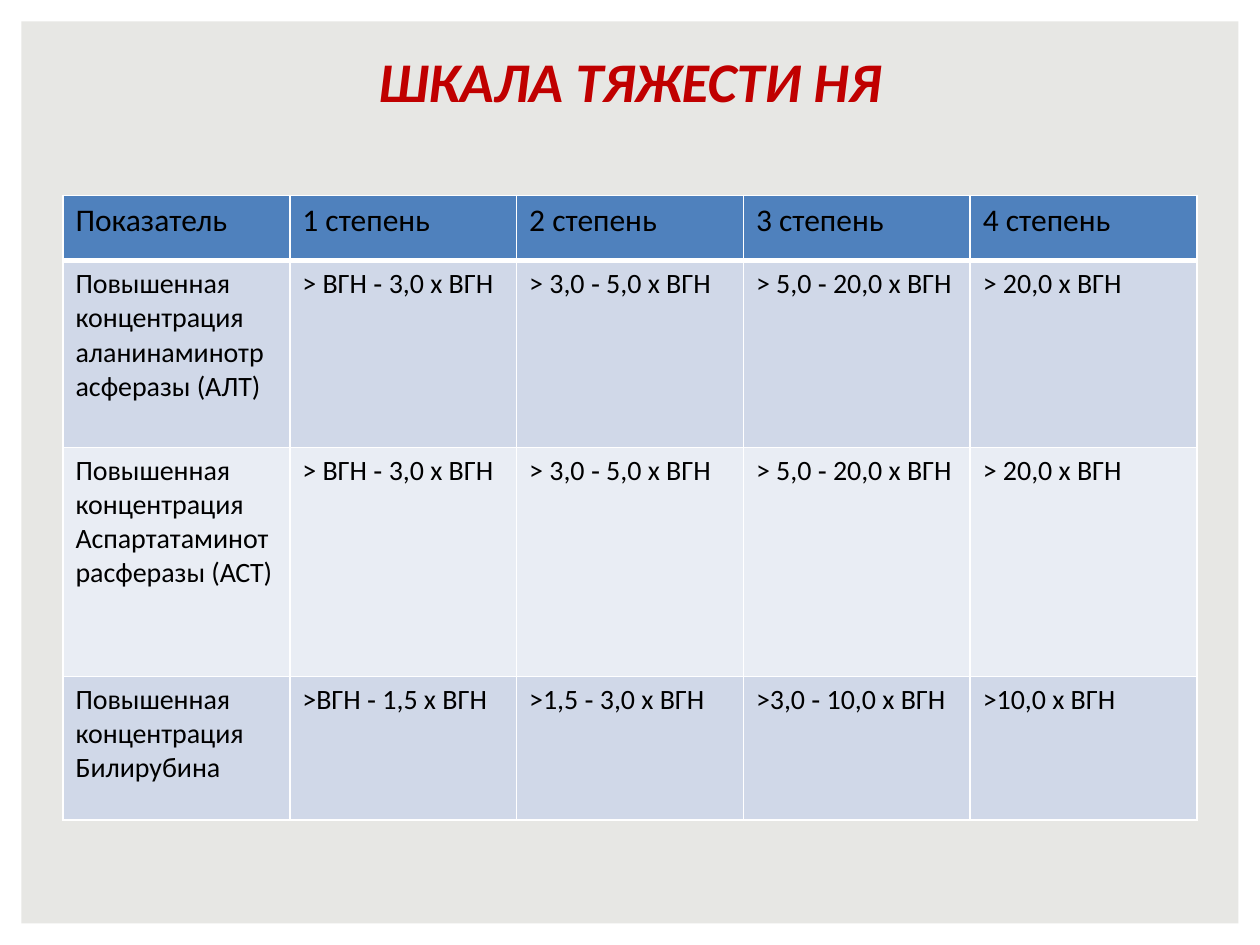
from lxml.etree import SubElement
from pptx import Presentation
from pptx.dml.color import RGBColor
from pptx.enum.shapes import MSO_SHAPE
from pptx.enum.text import MSO_ANCHOR, PP_ALIGN
from pptx.oxml.ns import qn
from pptx.util import Emu, Pt

PX = 9144  # EMU per px, 100 px to the inch
SLIDE_W, SLIDE_H = 1000, 750
MARGIN = 17

PANEL = "E7E7E4"
WHITE = "FFFFFF"
HEADER_FILL = "4F81BD"
BAND_FILLS = ["D0D8E8", "E9EDF4"]

TITLE_FONT = {"name": "Calibri", "size": Pt(32), "bold": True, "italic": True}
HEADER_FONT = {"name": "Calibri", "size": Pt(18), "bold": False}
BODY_FONT = {"name": "Calibri", "size": Pt(16), "bold": False}

ENZYME_GRADES = ["> ВГН ‐ 3,0 x ВГН", "> 3,0 ‐ 5,0 x ВГН", "> 5,0 ‐ 20,0 x ВГН", "> 20,0 x ВГН"]
BILIRUBIN_GRADES = [">ВГН ‐ 1,5 x ВГН", ">1,5 ‐ 3,0 x ВГН", ">3,0 ‐ 10,0 x ВГН", ">10,0 x ВГН"]
RAISED = "Повышенная\nконцентрация\n"
SEVERITY_ROWS = [
    ["Показатель"] + [f"{grade} степень" for grade in range(1, 5)],
    [RAISED + "аланинаминотрасферазы (АЛТ)"] + ENZYME_GRADES,
    [RAISED + "Аспартатаминотрасферазы (АСТ)"] + ENZYME_GRADES,
    [RAISED + "Билирубина"] + BILIRUBIN_GRADES,
]
ROW_HEIGHTS = [52, 148, 182, 114]


def emu(*lengths):
    return [Emu(length * PX) for length in lengths]


def rgb(value):
    return RGBColor.from_string(value)


def set_font(text_frame, font_values, color):
    for paragraph in text_frame.paragraphs:
        for run in paragraph.runs:
            for attribute, value in font_values.items():
                setattr(run.font, attribute, value)
            run.font.color.rgb = rgb(color)


def set_borders(cell, widths):
    """Draw white cell borders; widths maps side letters to points."""
    properties = cell._tc.get_or_add_tcPr()
    for side, width in widths.items():
        line = SubElement(properties, qn(f"a:ln{side}"), w=str(Pt(width)))
        SubElement(SubElement(line, qn("a:solidFill")), qn("a:srgbClr"), val=WHITE)


def add_panel(slide, box):
    panel = slide.shapes.add_shape(MSO_SHAPE.RECTANGLE, *emu(*box))
    panel.shadow.inherit = False
    panel.fill.solid()
    panel.fill.fore_color.rgb = rgb(PANEL)
    panel.line.fill.background()


def add_title(slide, box, title):
    frame = slide.shapes.add_textbox(*emu(*box)).text_frame
    frame_values = {
        "word_wrap": True, "vertical_anchor": MSO_ANCHOR.TOP,
        "margin_left": 0, "margin_top": 0, "margin_right": 0, "margin_bottom": 0,
    }
    for attribute, value in frame_values.items():
        setattr(frame, attribute, value)
    frame.text = title
    frame.paragraphs[0].alignment = PP_ALIGN.CENTER
    set_font(frame, TITLE_FONT, "C00000")


def add_severity_table(slide, box, rows, row_heights):
    column_count = len(rows[0])
    table = slide.shapes.add_table(len(rows), column_count, *emu(*box)).table
    for column in table.columns:
        column.width = Emu(box[2] * PX // column_count)
    for row_index, (texts, height) in enumerate(zip(rows, row_heights)):
        is_header = row_index == 0
        table.rows[row_index].height = Emu(height * PX)
        fill = HEADER_FILL if is_header else BAND_FILLS[(row_index - 1) % 2]
        for column_index, text in enumerate(texts):
            cell = table.cell(row_index, column_index)
            cell.text = text
            set_font(cell.text_frame, HEADER_FONT if is_header else BODY_FONT, "000000")
            set_borders(cell, {"L": 1, "R": 1, "T": 1, "B": 3 if is_header else 1})
            cell.fill.solid()
            cell.fill.fore_color.rgb = rgb(fill)


def main():
    presentation = Presentation()
    presentation.slide_width, presentation.slide_height = emu(SLIDE_W, SLIDE_H)
    slide = presentation.slides.add_slide(presentation.slide_layouts[6])
    slide.background.fill.solid()
    slide.background.fill.fore_color.rgb = rgb(WHITE)

    add_panel(slide, (MARGIN, MARGIN, SLIDE_W - 2 * MARGIN, SLIDE_H - 2 * MARGIN))
    add_title(slide, (50, 37, 900, 78), "ШКАЛА ТЯЖЕСТИ НЯ")
    add_severity_table(slide, (50, 155, 900, sum(ROW_HEIGHTS)), SEVERITY_ROWS, ROW_HEIGHTS)
    presentation.save("out.pptx")


if __name__ == "__main__":
    main()
